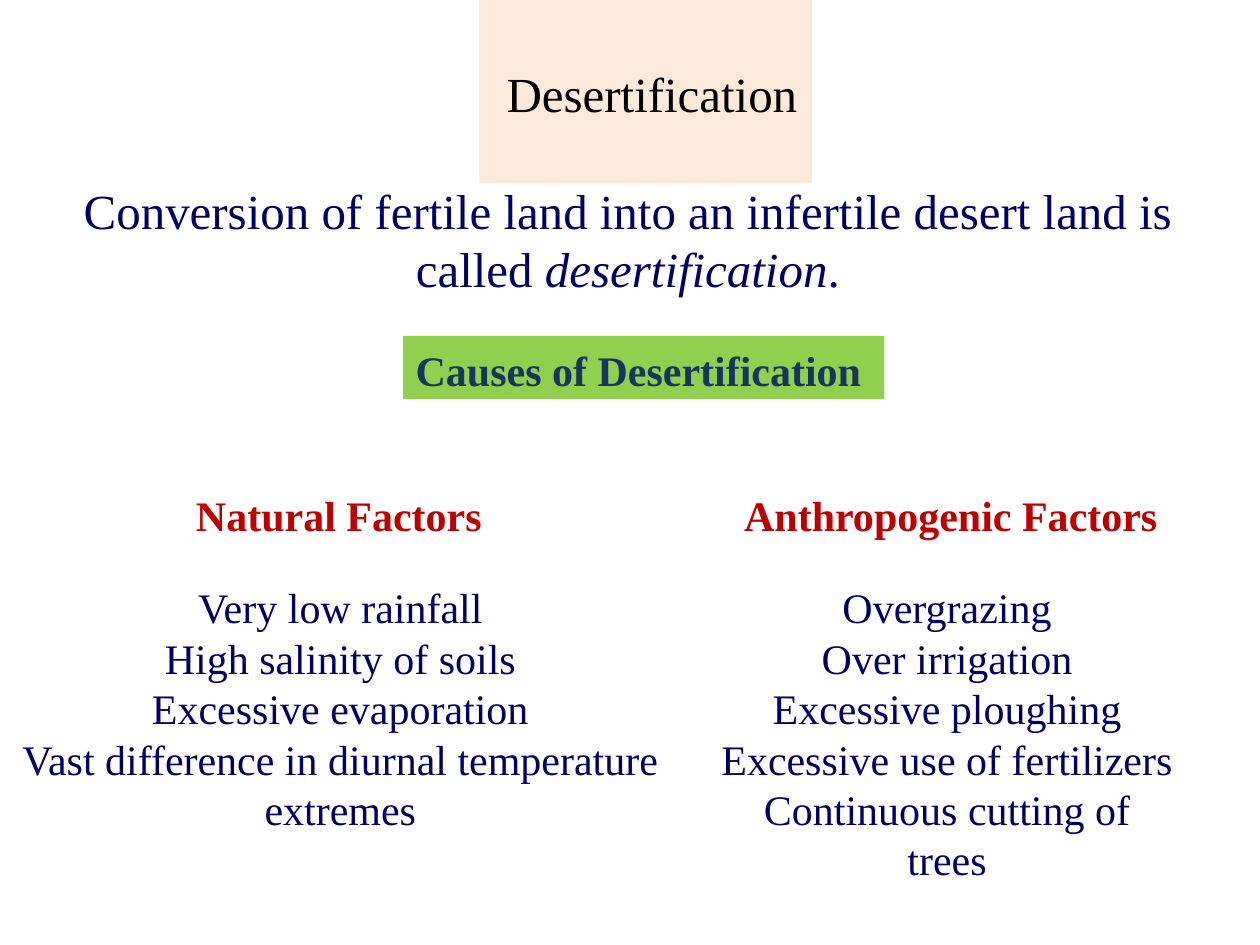
from pptx import Presentation
from pptx.dml.color import RGBColor
from pptx.enum.shapes import MSO_SHAPE
from pptx.enum.text import MSO_ANCHOR, PP_ALIGN
from pptx.util import Pt

COLORS = {
    "peach": "FCE9D9",
    "green": "91CF4F",
    "black": "000000",
    "slate": "16365D",
    "red": "BF0000",
    "navy": "000066",
}
FONT = "Times New Roman"
HEADING_TOP, LIST_TOP = 278.6, 331.5


def write_text(frame, paragraphs, *, color, size=24, bold=False, italic_run=None,
               align=PP_ALIGN.LEFT, anchor=MSO_ANCHOR.TOP, spacing=28.8,
               left=0, top=1):
    """Fill a frame with paragraphs, each a list of runs or line breaks."""
    frame.word_wrap = True
    frame.vertical_anchor = anchor
    frame.margin_left, frame.margin_top = Pt(left), Pt(top)
    frame.margin_right = frame.margin_bottom = 0
    for index, pieces in enumerate(paragraphs):
        paragraph = frame.add_paragraph() if index else frame.paragraphs[0]
        paragraph.alignment = align
        paragraph.line_spacing = Pt(spacing)
        for piece in pieces:
            if piece == "\n":
                paragraph.add_line_break()
                continue
            run = paragraph.add_run()
            run.text = piece
            run.font.name, run.font.size = FONT, Pt(size)
            run.font.bold, run.font.italic = bold, piece == italic_run
            run.font.color.rgb = RGBColor.from_string(COLORS[color])


def add_banner(slide, box, text, fill, **text_format):
    """Add a filled rectangle with one line of text."""
    banner = slide.shapes.add_shape(MSO_SHAPE.RECTANGLE, *map(Pt, box))
    banner.shadow.inherit = False
    banner.fill.solid()
    banner.fill.fore_color.rgb = RGBColor.from_string(COLORS[fill])
    banner.line.fill.background()
    write_text(banner.text_frame, [[text]], left=7.2, **text_format)


def add_text(slide, box, paragraphs, **text_format):
    """Add an unfilled text box."""
    textbox = slide.shapes.add_textbox(*map(Pt, box))
    write_text(textbox.text_frame, paragraphs, **text_format)


def add_factors(slide, heading, heading_span, factors, list_span):
    """Add a red heading and the centred list of factors below it."""
    heading_left, heading_width = heading_span
    list_left, list_width = list_span
    add_text(slide, (heading_left, HEADING_TOP, heading_width, 31), [[heading]],
             color="red", bold=True)
    add_text(slide, (list_left, LIST_TOP, list_width, 146), factors,
             color="navy", align=PP_ALIGN.CENTER)


def main():
    """Build the desertification slide and save it."""
    deck = Presentation()
    deck.slide_width, deck.slide_height = Pt(720), Pt(540)
    slide = deck.slides.add_slide(deck.slide_layouts[6])

    add_banner(slide, (274, 0, 190, 104.5), "Desertification", "peach",
               color="black", size=28, align=PP_ALIGN.CENTER,
               anchor=MSO_ANCHOR.MIDDLE, spacing=32.2, top=2.5)
    add_text(slide, (46.8, 102.5, 624, 69),
             [["Conversion of fertile land into an infertile desert land is called ",
               "desertification", "."]],
             color="navy", size=28, italic_run="desertification",
             align=PP_ALIGN.CENTER, spacing=33.1)
    add_banner(slide, (230.4, 192, 275, 36), "Causes of Desertification", "green",
               color="slate", bold=True, top=5)
    add_factors(slide, "Natural Factors", (112, 170),
                [["Very low rainfall"],
                 ["High salinity of soils"],
                 ["Excessive evaporation"],
                 ["Vast difference in diurnal temperature extremes"]],
                (10, 369))
    add_factors(slide, "Anthropogenic Factors", (425.2, 242),
                [["Overgrazing"],
                 ["Over irrigation"],
                 ["Excessive ploughing"],
                 ["Excessive use of fertilizers"],
                 ["Continuous cutting of", "\n", "trees"]],
                (409.7, 263))
    deck.save("out.pptx")


if __name__ == "__main__":
    main()
